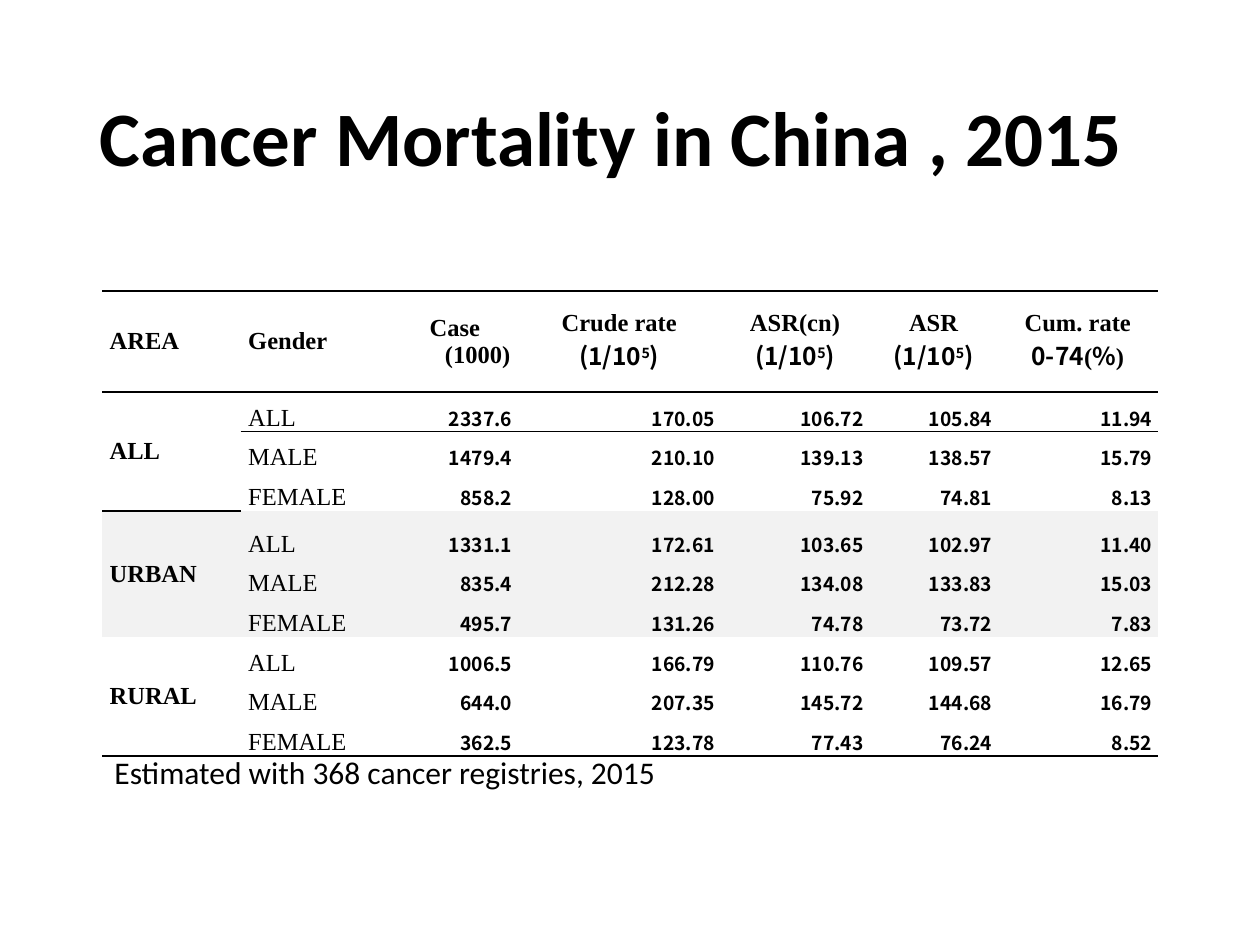
from dataclasses import dataclass

from lxml.etree import SubElement
from pptx import Presentation
from pptx.dml.color import RGBColor
from pptx.enum.text import MSO_ANCHOR, PP_ALIGN
from pptx.oxml.ns import qn
from pptx.util import Inches, Pt


@dataclass(frozen=True)
class Theme:
    ink: RGBColor = RGBColor(0, 0, 0)
    band: RGBColor = RGBColor(0xF2, 0xF2, 0xF2)
    main_font: str = "Calibri"
    label_font: str = "Times New Roman"
    number_font: str = "Noto Sans CJK SC"
    title_size: Pt = Pt(44)
    note_size: Pt = Pt(18)
    label_size: Pt = Pt(14)
    number_size: Pt = Pt(11)
    rule_width: Pt = Pt(1)


THEME = Theme()
NO_GRID_STYLE = "{2D5ABB26-0587-4C30-8999-92F81FD0307C}"
COLUMN_WIDTHS = (1.1, 1.2, 1, 1.61, 1.18, 1.02, 1.27)
TABLE_HEIGHT, HEADER_HEIGHT, URBAN_TOP_HEIGHT = 3.69, 0.8, 0.37
GENDERS = ("ALL", "MALE", "FEMALE")

# Header cells hold paragraphs: an alignment and (text, font, superscript) runs.
LEFT, CENTER, RIGHT = PP_ALIGN.LEFT, PP_ALIGN.CENTER, PP_ALIGN.RIGHT
SERIF, SANS = THEME.label_font, THEME.number_font
PER_100K = [("(1/10", SANS, False), ("5", SANS, True), (")", SANS, False)]
HEADERS = [
    [(LEFT, [("AREA", SERIF, False)])],
    [(LEFT, [("Gender", SERIF, False)])],
    [(CENTER, [("Case", SERIF, False)]), (RIGHT, [("(1000)", SERIF, False)])],
    [(CENTER, [("Crude rate ", SERIF, False), *PER_100K])],
    [(CENTER, [("ASR(cn)", SERIF, False)]), (CENTER, PER_100K)],
    [(CENTER, [("ASR ", SERIF, False), *PER_100K])],
    [(CENTER, [("Cum. rate", SERIF, False)]),
     (CENTER, [("0-74", SANS, False), ("(", SERIF, False),
               ("%", SANS, False), (")", SERIF, False)])],
]
MORTALITY = {
    "ALL": [
        ("2337.6", "170.05", "106.72", "105.84", "11.94"),
        ("1479.4", "210.10", "139.13", "138.57", "15.79"),
        ("858.2", "128.00", "75.92", "74.81", "8.13"),
    ],
    "URBAN": [
        ("1331.1", "172.61", "103.65", "102.97", "11.40"),
        ("835.4", "212.28", "134.08", "133.83", "15.03"),
        ("495.7", "131.26", "74.78", "73.72", "7.83"),
    ],
    "RURAL": [
        ("1006.5", "166.79", "110.76", "109.57", "12.65"),
        ("644.0", "207.35", "145.72", "144.68", "16.79"),
        ("362.5", "123.78", "77.43", "76.24", "8.52"),
    ],
}


def style_font(font, name, size, bold=False):
    font.name, font.size, font.bold = name, size, bold
    font.color.rgb = THEME.ink


def add_title(slide, text):
    title = slide.shapes.title
    title.left, title.top = Inches(0.69), Inches(0.4)
    title.width, title.height = Inches(8.62), Inches(1.45)
    title.text_frame.text = text
    title.text_frame.vertical_anchor = MSO_ANCHOR.MIDDLE
    paragraph = title.text_frame.paragraphs[0]
    paragraph.alignment = LEFT
    paragraph.line_spacing = 0.9
    style_font(paragraph.font, THEME.main_font, THEME.title_size, bold=True)


def add_note(slide, text):
    note = slide.shapes.add_textbox(Inches(0.81), Inches(5.93), Inches(4.66), Inches(0.4))
    note.text_frame.word_wrap = False
    note.text_frame.text = text
    style_font(note.text_frame.paragraphs[0].font, THEME.main_font, THEME.note_size)


def set_margins(cell, side, top=0.0):
    cell.margin_left = cell.margin_right = Inches(side)
    cell.margin_top, cell.margin_bottom = Inches(top), 0


def add_rules(cell, *edges):
    """Draw rules on the given cell edges; call before the cell is filled."""
    for edge in edges:
        line = SubElement(cell._tc.get_or_add_tcPr(), qn(f"a:{edge}"), w=str(THEME.rule_width))
        fill = SubElement(line, qn("a:solidFill"))
        SubElement(fill, qn("a:srgbClr"), val=str(THEME.ink))


def fill_header(cell, paragraphs):
    set_margins(cell, 0.06)
    cell.vertical_anchor = MSO_ANCHOR.MIDDLE
    add_rules(cell, "lnT", "lnB")
    cell.fill.background()
    for index, (alignment, runs) in enumerate(paragraphs):
        frame = cell.text_frame
        paragraph = frame.add_paragraph() if index else frame.paragraphs[0]
        paragraph.alignment = alignment
        style_font(paragraph.font, SERIF, THEME.label_size, bold=True)
        for text, font_name, superscript in runs:
            run = paragraph.add_run()
            run.text = text
            style_font(run.font, font_name, THEME.label_size, bold=True)
            if superscript:
                run._r.get_or_add_rPr().set("baseline", "30000")


def fill_label(cell, text, bold=False):
    set_margins(cell, 0.06)
    cell.text = text
    cell.vertical_anchor = MSO_ANCHOR.MIDDLE if bold else MSO_ANCHOR.BOTTOM
    style_font(cell.text_frame.paragraphs[0].font, SERIF, THEME.label_size, bold)


def fill_number(cell, value):
    set_margins(cell, 0.01, top=0.01)
    cell.text = f"{value} "
    cell.vertical_anchor = MSO_ANCHOR.BOTTOM
    paragraph = cell.text_frame.paragraphs[0]
    paragraph.alignment = RIGHT
    style_font(paragraph.font, SANS, THEME.number_size, bold=True)


def fill_area(table, first_row, area, area_rows):
    """Fill the three gender rows of one area under a merged area label."""
    for offset, (gender, values) in enumerate(zip(GENDERS, area_rows)):
        row = first_row + offset
        fill_label(table.cell(row, 0), "" if offset else area, bold=True)
        fill_label(table.cell(row, 1), gender)
        for column, value in enumerate(values, start=2):
            fill_number(table.cell(row, column), value)
        for column in range(len(COLUMN_WIDTHS)):
            cell = table.cell(row, column)
            if row == 1:
                add_rules(cell, "lnT")
            if area == "RURAL" and (column == 0 or gender == GENDERS[-1]):
                add_rules(cell, "lnB")
            if area == "URBAN":
                cell.fill.solid()
                cell.fill.fore_color.rgb = THEME.band
            else:
                cell.fill.background()
    table.cell(first_row, 0).merge(table.cell(first_row + len(GENDERS) - 1, 0))


def add_mortality_table(slide):
    body_rows = len(MORTALITY) * len(GENDERS)
    table = slide.shapes.add_table(
        body_rows + 1, len(COLUMN_WIDTHS), Inches(0.81), Inches(2.31),
        Inches(sum(COLUMN_WIDTHS)), Inches(TABLE_HEIGHT)).table
    table.first_row = table.horz_banding = False
    table._tbl.tblPr.find(qn("a:tableStyleId")).text = NO_GRID_STYLE
    for column, width in zip(table.columns, COLUMN_WIDTHS):
        column.width = Inches(width)
    row_height = (TABLE_HEIGHT - HEADER_HEIGHT - URBAN_TOP_HEIGHT) / (body_rows - 1)
    for row in table.rows:
        row.height = Inches(row_height)
    table.rows[0].height = Inches(HEADER_HEIGHT)
    table.rows[1 + len(GENDERS)].height = Inches(URBAN_TOP_HEIGHT)

    for column, paragraphs in enumerate(HEADERS):
        fill_header(table.cell(0, column), paragraphs)
    for index, (area, area_rows) in enumerate(MORTALITY.items()):
        fill_area(table, 1 + index * len(GENDERS), area, area_rows)


def main():
    presentation = Presentation()
    presentation.slide_width, presentation.slide_height = Inches(10), Inches(7.5)
    slide = presentation.slides.add_slide(presentation.slide_layouts[5])
    add_title(slide, "Cancer Mortality in China , 2015")
    add_mortality_table(slide)
    add_note(slide, "Estimated with 368 cancer registries, 2015")
    presentation.save("out.pptx")


if __name__ == "__main__":
    main()
